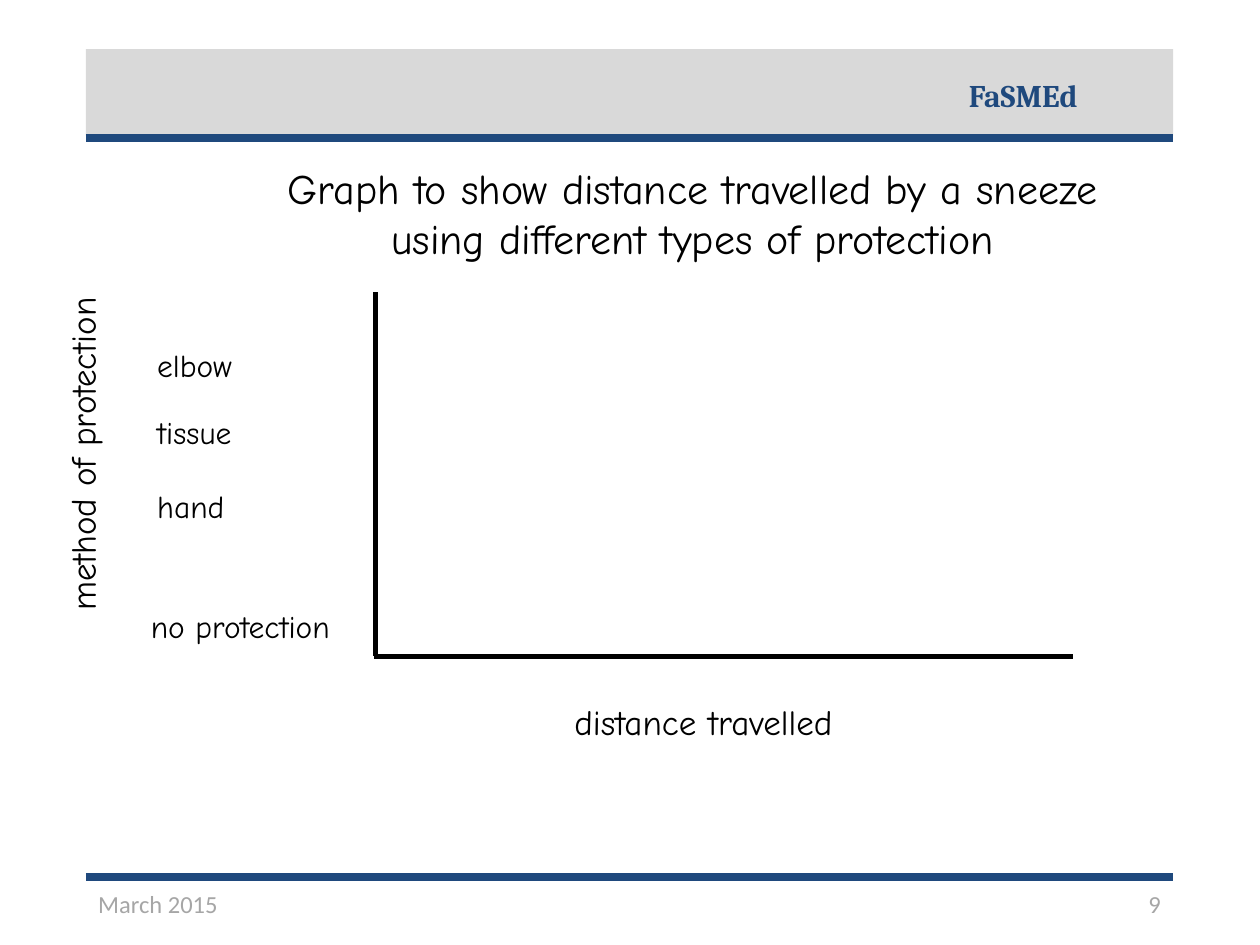
import pptx
import pptx.dml.color
import pptx.enum.shapes
import pptx.enum.text
import pptx.util
from lxml import etree
from pptx.dml.color import RGBColor
from pptx.enum.text import MSO_ANCHOR, PP_ALIGN
from pptx.oxml.ns import qn
from pptx.util import Cm

NAVY = RGBColor(0x1F, 0x49, 0x7D)
BAND_GREY = RGBColor(0xD9, 0xD9, 0xD9)
FOOTER_GREY = RGBColor(0xA6, 0xA6, 0xA6)
BLACK = RGBColor(0, 0, 0)

LEFT, RIGHT = 1.73, 23.65
AXIS_LEFT, AXIS_TOP, AXIS_BOTTOM, AXIS_RIGHT = 7.57, 5.89, 13.23, 21.64
METHODS = [
    ("elbow", 2.92, 6.86),
    ("tissue", 2.92, 8.2),
    ("hand", 2.92, 9.7),
    ("no protection", 2.79, 12.12),
]


def add_line(slide, start, end, color, width):
    """Draw a straight line between two points given in centimetres."""
    line = slide.shapes.add_connector(
        pptx.enum.shapes.MSO_CONNECTOR.STRAIGHT, *map(Cm, start + end)
    )
    line.line.color.rgb = color
    line.line.width = pptx.util.Pt(width)
    etree.SubElement(line._element.spPr, qn("a:effectLst"))


def add_band(slide, left, top, width, height, color):
    """Draw a plain filled rectangle."""
    band = slide.shapes.add_shape(
        pptx.enum.shapes.MSO_SHAPE.RECTANGLE, *map(Cm, (left, top, width, height))
    )
    band.shadow.inherit = False
    band.fill.solid()
    band.fill.fore_color.rgb = color
    band.line.fill.background()


def add_text(slide, text, box, size, font="Comic Neue", color=BLACK, bold=False,
             align=PP_ALIGN.LEFT, anchor=MSO_ANCHOR.TOP, rotation=0):
    """Add a wrapping text box with a single run."""
    shape = slide.shapes.add_textbox(*map(Cm, box))
    shape.rotation = rotation
    frame = shape.text_frame
    frame.word_wrap = True
    frame.auto_size = pptx.enum.text.MSO_AUTO_SIZE.SHAPE_TO_FIT_TEXT
    frame.vertical_anchor = anchor
    paragraph = frame.paragraphs[0]
    paragraph.alignment = align
    run = paragraph.add_run()
    run.text = text
    run.font.name = font
    run.font.size = pptx.util.Pt(size)
    run.font.color.rgb = color
    run.font.bold = bold


def add_header(slide):
    """Add the grey band, its rule and the project name."""
    add_band(slide, LEFT, 0.99, RIGHT - LEFT, 1.75, BAND_GREY)
    add_line(slide, (LEFT, 2.79), (RIGHT, 2.79), NAVY, 4.5)
    add_text(slide, "FaSMEd", (19.28, 1.4, 3.4, 1.02), 18, "Cambria", NAVY, bold=True)


def add_footer(slide):
    """Add the bottom rule, the date and the page number."""
    width = 3.76
    add_line(slide, (LEFT, 17.68), (RIGHT, 17.68), NAVY, 4.5)
    for text, left, align in (
        ("March 2015", LEFT, PP_ALIGN.LEFT),
        ("9", RIGHT - width, PP_ALIGN.RIGHT),
    ):
        add_text(slide, text, (left, 17.78, width, 0.86), 14, "Calibri", FOOTER_GREY,
                 align=align, anchor=MSO_ANCHOR.MIDDLE)


def add_graph(slide):
    """Add the empty graph with its axes, labels and title."""
    add_line(slide, (AXIS_LEFT, AXIS_TOP), (AXIS_LEFT, AXIS_BOTTOM), BLACK, 3)
    add_line(slide, (AXIS_LEFT - 0.03, AXIS_BOTTOM), (AXIS_RIGHT, AXIS_BOTTOM), BLACK, 3)
    for method, left, top in METHODS:
        add_text(slide, method, (left, top, 5.23, 1.02), 18)
    add_text(slide, "method of protection", (-2.92, 7.42, 9.17, 1.12), 20, rotation=270)
    add_text(slide, "distance travelled", (11.33, 14, 9.32, 1.12), 20)
    add_text(
        slide,
        "Graph to show distance travelled by a sneeze using different types of protection",
        (5.26, 3.15, 17.4, 2.31), 24, align=PP_ALIGN.CENTER,
    )


def main():
    """Build the slide and save the presentation."""
    presentation = pptx.Presentation()
    presentation.slide_width = Cm(25.4)
    presentation.slide_height = Cm(19.05)
    slide = presentation.slides.add_slide(presentation.slide_layouts[6])
    add_footer(slide)
    add_header(slide)
    add_graph(slide)
    presentation.save("out.pptx")


if __name__ == "__main__":
    main()
